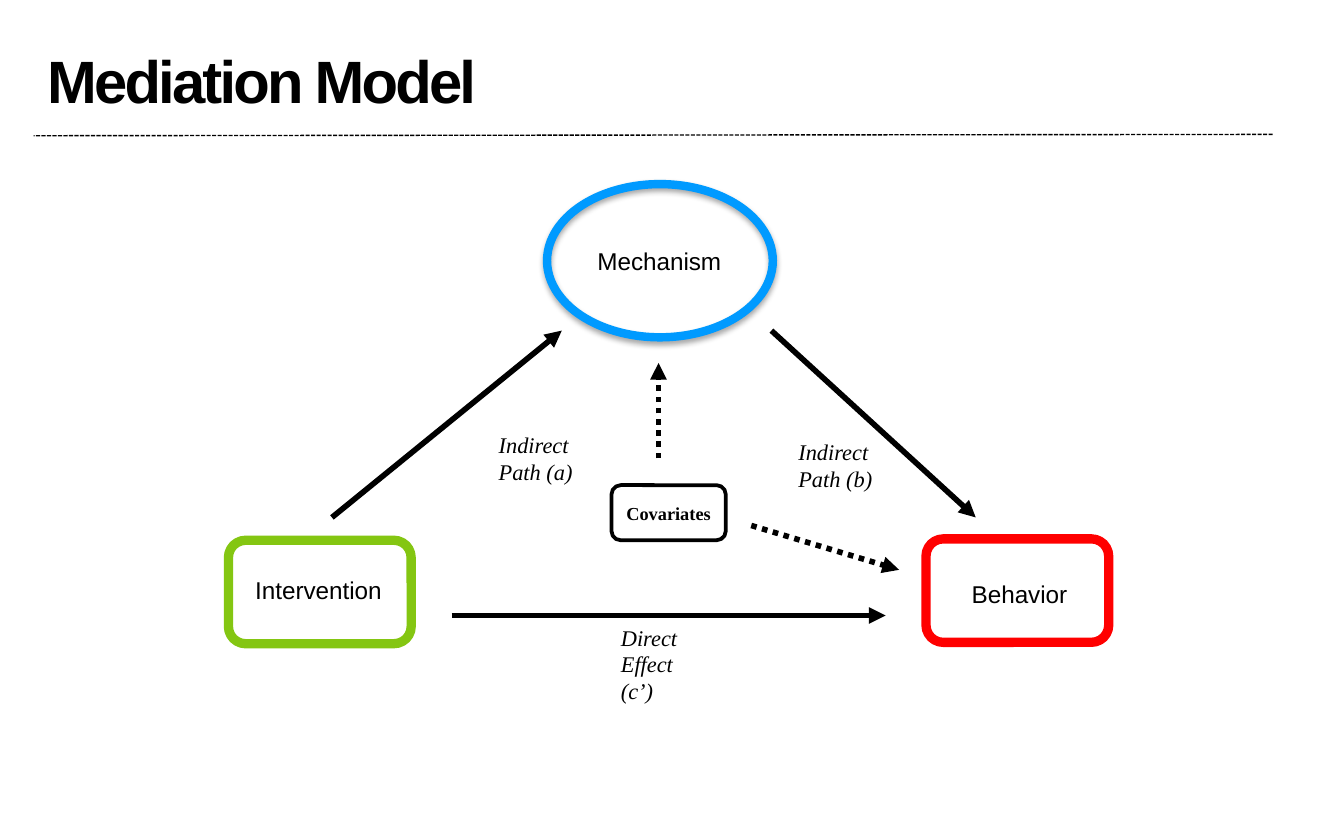
from lxml.etree import SubElement
from pptx import Presentation
from pptx.dml.color import RGBColor
from pptx.enum.dml import MSO_LINE
from pptx.enum.shapes import MSO_CONNECTOR, MSO_SHAPE
from pptx.enum.text import MSO_ANCHOR, MSO_AUTO_SIZE, PP_ALIGN
from pptx.oxml.ns import qn
from pptx.util import Inches, Pt

BLACK = RGBColor(0x00, 0x00, 0x00)
WHITE = RGBColor(0xFF, 0xFF, 0xFF)
RED = RGBColor(0xFF, 0x00, 0x00)
GREEN = RGBColor(0x84, 0xC6, 0x12)
BLUE = RGBColor(0x00, 0x9A, 0xFF)
SANS, SERIF = "Arial", "Times New Roman"
WIDTH, HEIGHT = Inches(10), Inches(6.25)
COLUMNS, ROWS = 100, 125
NARROW_INSETS = (0.07, 0.04)
WIDE_INSETS = (0.1, 0.05)

TITLE = "Mediation Model"
TITLE_PLACE = (2.5, 7.6, 90, 16.6)
RULE = ((94.7, 20), (2.5, 20.2))

NODES = [
    (MSO_SHAPE.ROUNDED_RECTANGLE, (68.9, 80.2, 13.6, 15.4), WHITE, RED, 5),
    (MSO_SHAPE.ROUNDED_RECTANGLE, (17, 80.4, 13.6, 15.4), WHITE, GREEN, 5),
    (MSO_SHAPE.ROUNDED_RECTANGLE, (45.5, 72.2, 8.5, 8.2), WHITE, BLACK, 2),
    (MSO_SHAPE.OVAL, (40.7, 27.4, 16.8, 22.8), None, BLUE, 4.5),
]
NODE_LABELS = [
    ("Intervention", (18, 84.6, 11.5, 6.4), PP_ALIGN.LEFT),
    ("Mechanism", (43.3, 35.6, 11.5, 6.4), PP_ALIGN.CENTER),
    ("Behavior", (70.1, 85.2, 11.5, 6.4), PP_ALIGN.CENTER),
]
PATH_LABELS = [
    ("Indirect Path (a)", (36.4, 63.4, 7.2, 9.6)),
    ("Direct Effect (c’)", (45.5, 92, 7.3, 9.6)),
    ("Indirect Path (b)", (58.7, 64.4, 7.2, 9.6)),
]
PATHS = [
    ((24.7, 77), (41.8, 49.2), None),
    ((57.4, 49.2), (72.6, 77), None),
    ((33.6, 91.6), (65.9, 91.6), None),
    ((49, 68.2), (49, 54), MSO_LINE.ROUND_DOT),
    ((55.9, 78.2), (66.9, 84.8), MSO_LINE.ROUND_DOT),
]


def across(columns):
    return round(WIDTH * columns / COLUMNS)


def down(rows):
    return round(HEIGHT * rows / ROWS)


def place(left, top, width, height):
    return across(left), down(top), across(width), down(height)


def add_line(slide, start, end, weight, dash, arrow):
    line = slide.shapes.add_connector(
        MSO_CONNECTOR.STRAIGHT, across(start[0]), down(start[1]), across(end[0]), down(end[1]))
    line.line.color.rgb = BLACK
    line.line.width = Pt(weight)
    if dash:
        line.line.dash_style = dash
    if arrow:
        SubElement(line.line._get_or_add_ln(), qn("a:tailEnd"), type="triangle")
    SubElement(line._element.spPr, qn("a:effectLst"))


def add_node(slide, kind, position, fill, outline, weight):
    node = slide.shapes.add_shape(kind, *place(*position))
    if fill is None:
        node.fill.background()
    else:
        node.fill.solid()
        node.fill.fore_color.rgb = fill
    node.line.color.rgb = outline
    node.line.width = Pt(weight)
    node.shadow.inherit = False
    return node


def add_glow(node):
    effects = node._element.spPr.find(qn("a:effectLst"))
    shadow = SubElement(effects, qn("a:outerShdw"), blurRad=str(Pt(3.1)), dist=str(Pt(1.8)),
                        dir="5400000", rotWithShape="0")
    color = SubElement(shadow, qn("a:srgbClr"), val=str(BLACK))
    SubElement(color, qn("a:alpha"), val="35000")


def write(frame, text, face, size, align=PP_ALIGN.LEFT, insets=WIDE_INSETS, bold=False, italic=False):
    frame.word_wrap = True
    frame.margin_left = frame.margin_right = Inches(insets[0])
    frame.margin_top = frame.margin_bottom = Inches(insets[1])
    paragraph = frame.paragraphs[0]
    paragraph.text = text
    paragraph.alignment = align
    font = paragraph.font
    font.name, font.size, font.bold, font.italic = face, Pt(size), bold, italic
    font.color.rgb = BLACK
    return paragraph


def add_label(slide, text, position, *style, **options):
    frame = slide.shapes.add_textbox(*place(*position)).text_frame
    write(frame, text, *style, **options)
    frame.auto_size = MSO_AUTO_SIZE.SHAPE_TO_FIT_TEXT


def main():
    deck = Presentation()
    deck.slide_width, deck.slide_height = WIDTH, HEIGHT
    slide = deck.slides.add_slide(deck.slide_layouts[5])

    title = slide.shapes.title
    title.left, title.top, title.width, title.height = place(*TITLE_PLACE)
    title.text_frame.vertical_anchor = MSO_ANCHOR.TOP
    heading = write(title.text_frame, TITLE, SANS, 32, bold=True)
    heading.line_spacing = 0.8
    heading.runs[0].font._element.set("spc", "-150")

    add_line(slide, *RULE, 0.75, MSO_LINE.SQUARE_DOT, False)
    for start, end, dash in PATHS:
        add_line(slide, start, end, 3, dash, True)

    behavior, intervention, covariates, mechanism = [add_node(slide, *node) for node in NODES]
    add_glow(mechanism)
    covariates.text_frame.vertical_anchor = MSO_ANCHOR.MIDDLE
    write(covariates.text_frame, "Covariates", SERIF, 9.8, PP_ALIGN.CENTER, NARROW_INSETS, bold=True)

    for text, position, align in NODE_LABELS:
        add_label(slide, text, position, SANS, 13, align)
    for text, position in PATH_LABELS:
        add_label(slide, text, position, SERIF, 12, insets=NARROW_INSETS, italic=True)

    deck.save("out.pptx")


if __name__ == "__main__":
    main()
